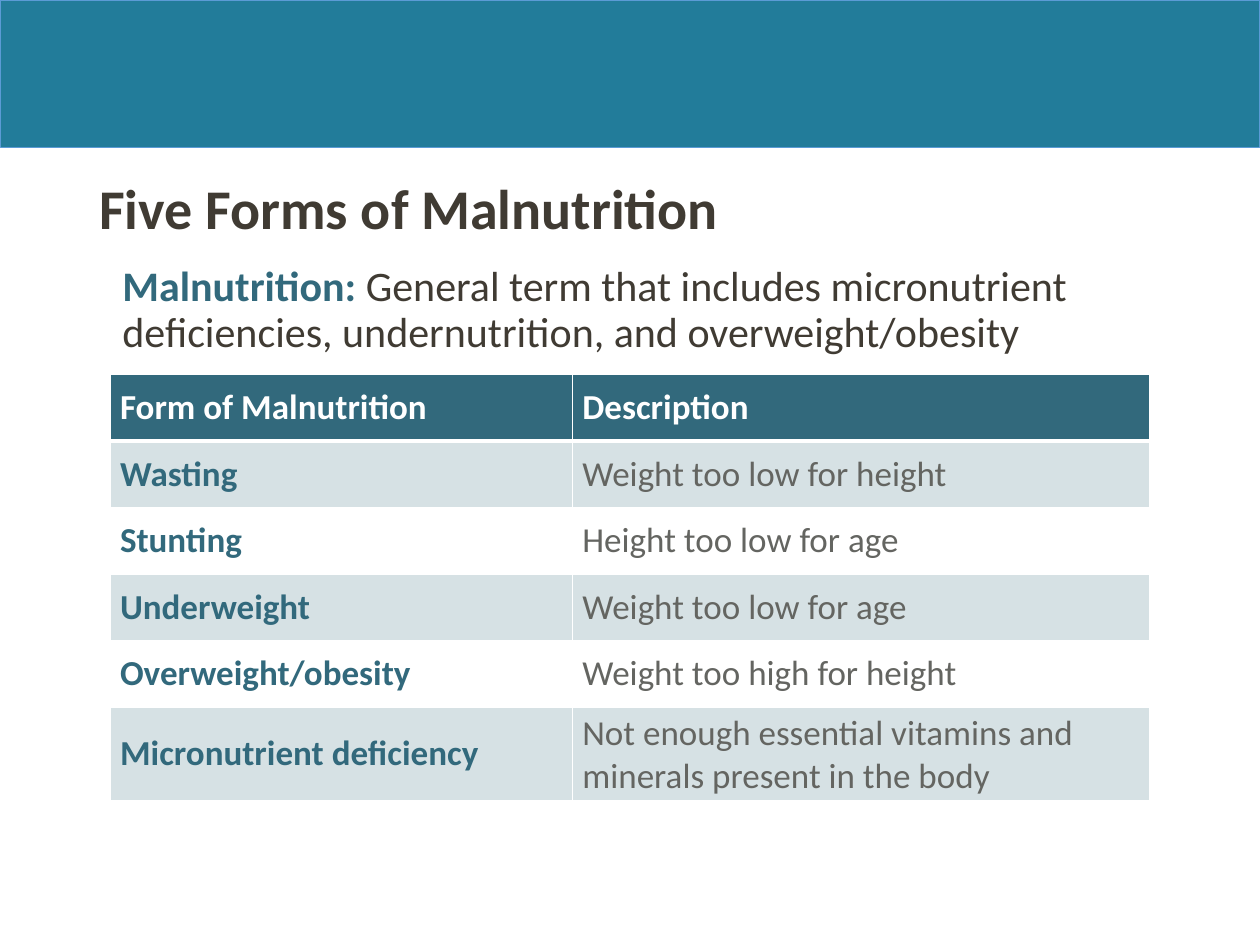
from dataclasses import dataclass

from lxml import etree
from pptx import Presentation
from pptx.dml.color import RGBColor
from pptx.enum.shapes import MSO_SHAPE
from pptx.enum.text import MSO_ANCHOR
from pptx.oxml.ns import qn
from pptx.util import Cm, Pt

RECTANGLE = MSO_SHAPE.RECTANGLE
TOP, MIDDLE = MSO_ANCHOR.TOP, MSO_ANCHOR.MIDDLE


@dataclass(frozen=True)
class Theme:
    font: str = "Calibri"
    banner: str = "227C9A"
    banner_line: str = "5B9BD5"
    ink: str = "403B33"
    accent: str = "32697C"
    muted: str = "646561"
    white: str = "FFFFFF"
    title_size: int = 32
    body_size: int = 24
    table_size: int = 20
    band_opacity: int = 20


THEME = Theme()

ROWS = [
    ("Form of Malnutrition", "Description"),
    ("Wasting", "Weight too low for height"),
    ("Stunting", "Height too low for age"),
    ("Underweight", "Weight too low for age"),
    ("Overweight/obesity", "Weight too high for height"),
    ("Micronutrient deficiency",
     "Not enough essential vitamins and minerals present in the body"),
]
COLUMN_WIDTHS = (9.32, 11.63)
ROW_HEIGHT, LAST_ROW_HEIGHT = 1.34, 1.9


def color(value):
    return RGBColor.from_string(value)


def add_span(para, text, size, ink, bold=False):
    span = para.add_run()
    span.text = text
    span.font.name = THEME.font
    span.font.size = Pt(size)
    span.font.bold = bold
    span.font.color.rgb = color(ink)


def add_banner(page, width, height):
    banner = page.shapes.add_shape(RECTANGLE, 0, 0, width, height)
    banner.shadow.inherit = False
    banner.fill.solid()
    banner.fill.fore_color.rgb = color(THEME.banner)
    banner.line.color.rgb = color(THEME.banner_line)
    banner.line.width = Pt(0.5)


def add_text(page, left, top, width, height, spans):
    box = page.shapes.add_textbox(Cm(left), Cm(top), Cm(width), Cm(height))
    frame = box.text_frame
    frame.word_wrap = True
    frame.vertical_anchor = TOP
    para = frame.paragraphs[0]
    para.line_spacing = 0.9
    for span in spans:
        add_span(para, *span)


def fill_cell(cell, fill, opacity=100):
    cell.fill.solid()
    cell.fill.fore_color.rgb = color(fill)
    if opacity < 100:
        tint = cell._tc.tcPr.find(f"{qn('a:solidFill')}/{qn('a:srgbClr')}")
        etree.SubElement(tint, qn("a:alpha"), val=str(opacity * 1000))


def set_borders(cell, top, bottom):
    """Draw white borders; the lines must precede the fill in the XML."""
    widths = {"a:lnL": 1, "a:lnR": 1, "a:lnT": top, "a:lnB": bottom}
    for position, (tag, width) in enumerate(widths.items()):
        line = etree.Element(qn(tag), w=str(Pt(width)))
        fill = etree.SubElement(line, qn("a:solidFill"))
        etree.SubElement(fill, qn("a:srgbClr"), val=THEME.white)
        cell._tc.get_or_add_tcPr().insert(position, line)


def style_cell(cell, row, column, text):
    # Header, then alternating tinted and white rows
    if row == 0:
        fill_cell(cell, THEME.accent)
        ink = THEME.white
    else:
        if row % 2:
            fill_cell(cell, THEME.accent, THEME.band_opacity)
        else:
            fill_cell(cell, THEME.white)
        ink = THEME.muted if column else THEME.accent
    set_borders(cell, top=3 if row == 1 else 1, bottom=3 if row == 0 else 1)
    cell.vertical_anchor = MIDDLE
    cell.margin_left = cell.margin_right = Cm(0.2)
    cell.margin_top = cell.margin_bottom = Cm(0.1)
    add_span(cell.text_frame.paragraphs[0], text, THEME.table_size, ink,
             bold=row == 0 or column == 0)


def add_forms_table(page, left, top):
    heights = [ROW_HEIGHT] * (len(ROWS) - 1) + [LAST_ROW_HEIGHT]
    table = page.shapes.add_table(
        len(ROWS), len(COLUMN_WIDTHS), Cm(left), Cm(top),
        Cm(sum(COLUMN_WIDTHS)), Cm(sum(heights))).table
    for column, width in zip(table.columns, COLUMN_WIDTHS):
        column.width = Cm(width)
    for row, (height, texts) in enumerate(zip(heights, ROWS)):
        table.rows[row].height = Cm(height)
        for column, text in enumerate(texts):
            style_cell(table.cell(row, column), row, column, text)


def main():
    deck = Presentation()
    deck.slide_width, deck.slide_height = Cm(25.4), Cm(19.05)
    page = deck.slides.add_slide(deck.slide_layouts[6])

    # Banner and title
    add_banner(page, deck.slide_width, Cm(2.97))
    add_text(page, 1.75, 3.53, 21.9, 3.68, [
        ("Five Forms of Malnutrition", THEME.title_size, THEME.ink, True)])

    # Table of forms
    add_forms_table(page, 2.22, 7.55)

    # Definition
    add_text(page, 2.22, 5.23, 20.95, 1.96, [
        ("Malnutrition: ", THEME.body_size, THEME.accent, True),
        ("General term that includes micronutrient deficiencies, "
         "undernutrition, and overweight/obesity",
         THEME.body_size, THEME.ink)])

    deck.save("out.pptx")


if __name__ == "__main__":
    main()
